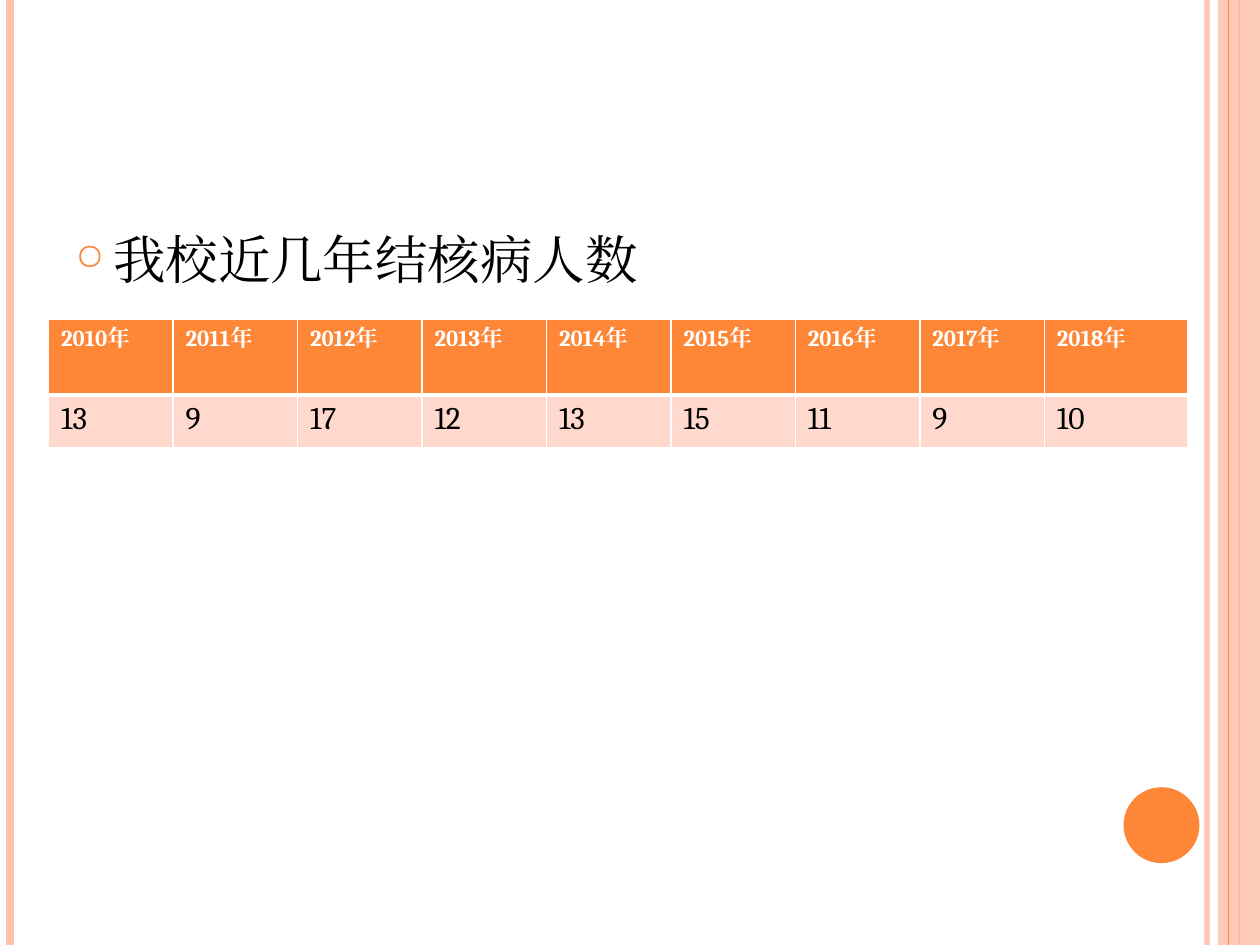
from dataclasses import dataclass

from lxml import etree
from pptx import Presentation
from pptx.dml.color import RGBColor
from pptx.enum.shapes import MSO_CONNECTOR, MSO_SHAPE
from pptx.oxml.ns import qn
from pptx.util import Cm, Pt

STRAIGHT = MSO_CONNECTOR.STRAIGHT
RECTANGLE = MSO_SHAPE.RECTANGLE
OVAL = MSO_SHAPE.OVAL


@dataclass(frozen=True)
class Theme:
    accent: str = "FE8637"
    pale: str = "FEC3AE"
    row: str = "FFD9CE"
    white: str = "FFFFFF"
    black: str = "000000"
    font: str = "Cambria"
    bullet_size: int = 30
    header_size: int = 13
    value_size: int = 18


THEME = Theme()
WIDTH, HEIGHT = Cm(25.4), Cm(19.05)
CASES = {2010: 13, 2011: 9, 2012: 17, 2013: 12, 2014: 13,
         2015: 15, 2016: 11, 2017: 9, 2018: 10}


def add_element(parent, tag, **attributes):
    return etree.SubElement(parent, qn(tag), attributes)


def set_alpha(fill_owner, percent):
    color = next(fill_owner.iter(qn("a:srgbClr")))
    add_element(color, "a:alpha", val=str(percent * 1000))


def style_run(run, size, color, bold=False):
    font = run.font
    font.name, font.size, font.bold = THEME.font, Pt(size), bold
    font.color.rgb = RGBColor.from_string(color)
    add_element(run._r.get_or_add_rPr(), "a:ea", typeface=THEME.font)


def add_rule(slide, x, height, color, weight, alpha=100):
    """Draw a vertical line from the top of the slide."""
    rule = slide.shapes.add_connector(STRAIGHT, x, 0, x, height)
    rule.line.color.rgb = RGBColor.from_string(color)
    rule.line.width = Pt(weight)
    properties = rule._element.spPr
    if alpha < 100:
        set_alpha(properties, alpha)
    add_element(properties, "a:effectLst")


def add_solid(slide, kind, left, top, width, height, color):
    shape = slide.shapes.add_shape(kind, left, top, width, height)
    shape.shadow.inherit = False
    shape.fill.solid()
    shape.fill.fore_color.rgb = RGBColor.from_string(color)
    shape.line.fill.background()
    return shape


def add_frame(slide, width, height):
    """Draw the side stripes and the round marker."""
    add_rule(slide, width - Cm(1.07), height, THEME.pale, 3, alpha=93)
    add_rule(slide, Cm(0.21), height, THEME.pale, 4.5)
    add_rule(slide, width - Cm(0.42), height, THEME.accent, 1.5)
    band_width = Cm(0.85)
    band = add_solid(slide, RECTANGLE, width - band_width, 0,
                     band_width, height, THEME.pale)
    set_alpha(band._element.spPr, 87)
    add_rule(slide, width - Cm(0.64), height, THEME.accent, 0.75)
    diameter = Cm(1.53)
    add_solid(slide, OVAL, width - Cm(2.75), height - Cm(3.18),
              diameter, diameter, THEME.accent)


def set_borders(cell, bottom):
    properties = cell._tc.get_or_add_tcPr()
    weights = {"a:lnL": 1, "a:lnR": 1, "a:lnT": 1, "a:lnB": bottom}
    for position, (tag, weight) in enumerate(weights.items()):
        border = etree.Element(qn(tag), w=str(Pt(weight)))
        fill = add_element(border, "a:solidFill")
        add_element(fill, "a:srgbClr", val=THEME.white)
        properties.insert(position, border)


def fill_cell(cell, text, size, color, background, bold, bottom):
    cell.text_frame.text = text
    style_run(cell.text_frame.paragraphs[0].runs[0], size, color, bold)
    cell.fill.solid()
    cell.fill.fore_color.rgb = RGBColor.from_string(background)
    set_borders(cell, bottom)


def add_case_table(slide, left, top, width, cases):
    row_heights = Cm(1.52), Cm(1.06)
    table = slide.shapes.add_table(2, len(cases), left, top, width,
                                   sum(row_heights)).table
    for row, height in zip(table.rows, row_heights):
        row.height = height
    column_width = Cm(2.51)
    for column in table.columns:
        column.width = column_width
    table.columns[len(cases) - 1].width = width - column_width * (len(cases) - 1)
    for index, (year, count) in enumerate(cases.items()):
        fill_cell(table.cell(0, index), f"{year}年", THEME.header_size,
                  THEME.white, THEME.accent, bold=True, bottom=3)
        fill_cell(table.cell(1, index), str(count), THEME.value_size,
                  THEME.black, THEME.row, bold=False, bottom=1)


def add_bullet_text(slide, left, top, width, height, text):
    text_frame = slide.shapes.add_textbox(left, top, width, height).text_frame
    text_frame.word_wrap = True
    text_frame.text = text
    paragraph = text_frame.paragraphs[0]
    properties = paragraph._p.get_or_add_pPr()
    indent = Cm(0.76)
    properties.set("marL", str(indent))
    properties.set("indent", str(-indent))
    bullet_color = add_element(properties, "a:buClr")
    add_element(bullet_color, "a:srgbClr", val=THEME.accent)
    add_element(properties, "a:buSzPct", val="70000")
    add_element(properties, "a:buChar", char="○")
    style_run(paragraph.runs[0], THEME.bullet_size, THEME.black)


def main():
    presentation = Presentation()
    presentation.slide_width, presentation.slide_height = WIDTH, HEIGHT
    slide = presentation.slides.add_slide(presentation.slide_layouts[6])
    add_frame(slide, WIDTH, HEIGHT)
    add_case_table(slide, Cm(0.98), Cm(6.44), Cm(22.98), CASES)
    add_bullet_text(slide, Cm(1.27), Cm(4.45), Cm(20.75), Cm(13.54),
                    "我校近几年结核病人数")
    presentation.save("out.pptx")


if __name__ == "__main__":
    main()
